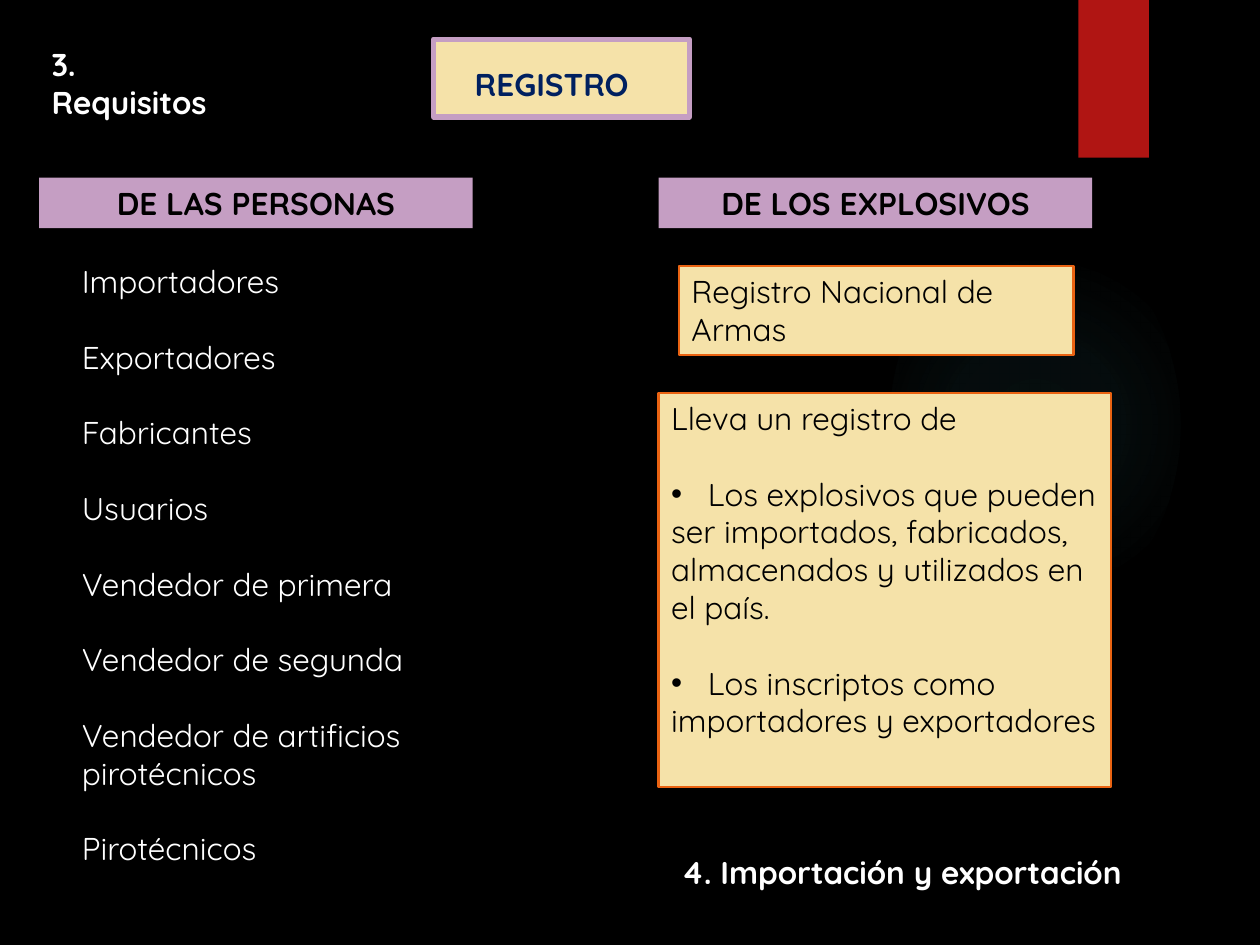
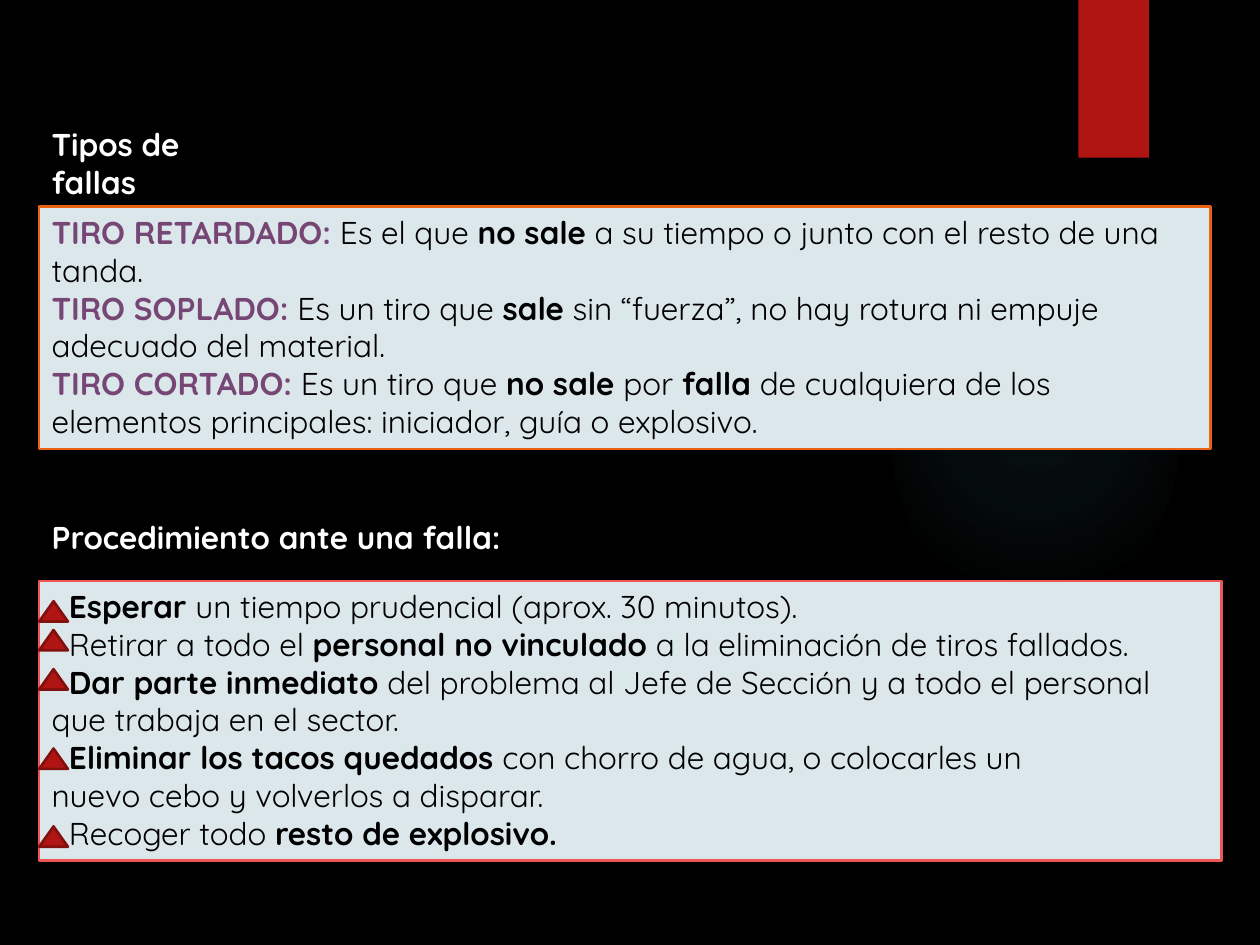
from dataclasses import dataclass

from lxml import etree
from pptx import Presentation
from pptx.dml.color import RGBColor
from pptx.enum.shapes import MSO_SHAPE as Shape
from pptx.enum.text import MSO_ANCHOR as Anchor, PP_ALIGN as Align
from pptx.oxml import parse_xml
from pptx.oxml.ns import nsdecls, qn
from pptx.util import Cm, Pt


@dataclass(frozen=True)
class Theme:
    font: str = "Quicksand"
    size: int = 18
    line_gap: float = 21.6
    outline: float = 1.5
    frame: float = 3
    black: str = "000000"
    white: str = "FFFFFF"
    navy: str = "002060"
    plum: str = "764674"
    lilac: str = "C59EC3"
    cream: str = "F5E2A9"
    ice: str = "DCE7EC"
    orange: str = "EA6312"
    coral: str = "ED5654"
    red: str = "B01513"
    dark_red: str = "82100E"
    glow: str = "50B9C1"


T = Theme()
LEFT = 0.79
RIGHT = 13.28
BULLET_TAB = 0.74
MARKER_INDENT = 0.35


@dataclass
class Para:
    runs: list
    before: float = 0
    align: Align = Align.LEFT
    bullet: bool = False
    indent: float = 0


def run(text, color=T.black, bold=False):
    return text, color, bold


def strong(text, color=T.black):
    return run(text, color, True)


def write(sp, paras):
    tf = sp.text_frame
    tf.word_wrap = True
    tf.vertical_anchor = Anchor.TOP
    for i, para in enumerate(paras):
        p = tf.paragraphs[0] if i == 0 else tf.add_paragraph()
        p.alignment = para.align
        p.space_before = Pt(para.before)
        pPr = p._p.get_or_add_pPr()
        pPr.set("marL", "0")
        pPr.set("indent", str(Cm(para.indent)))
        if para.bullet:
            etree.SubElement(pPr, qn("a:buFont"), typeface="Arial")
            etree.SubElement(pPr, qn("a:buChar"), char="•")
            tabs = etree.SubElement(pPr, qn("a:tabLst"))
            etree.SubElement(tabs, qn("a:tab"), pos=str(Cm(BULLET_TAB)), algn="l")
        for text, color, bold in para.runs:
            r = p.add_run()
            r.text = text
            r.font.name = T.font
            r.font.size = Pt(T.size)
            r.font.bold = bold
            r.font.color.rgb = RGBColor.from_string(color)


def add_shape(s, box, fill, line=None, width=T.outline, kind=Shape.RECTANGLE, paras=()):
    sp = s.shapes.add_shape(kind, *map(Cm, box))
    sp.shadow.inherit = False
    sp.fill.solid()
    sp.fill.fore_color.rgb = RGBColor.from_string(fill)
    if line:
        sp.line.color.rgb = RGBColor.from_string(line)
        sp.line.width = Pt(width)
    else:
        sp.line.fill.background()
    write(sp, paras)
    return sp


def add_text(s, box, paras):
    write(s.shapes.add_textbox(*map(Cm, box)), paras)


def add_heading(s, left, top, width, text, color=T.white):
    add_text(s, (left, top, width, 1.02), [Para([strong(text, color)])])


def add_column_band(s, left, text):
    add_shape(s, (left, 3.58, 8.74, 1.02), T.lilac,
              paras=[Para([strong(text)], align=Align.CENTER)])


def add_glow(s):
    sp = add_shape(s, (17.93, 4.65, 5.87, 7.82), T.glow, kind=Shape.OVAL)
    stops = "".join(
        f'<a:gs pos="{pos}000"><a:srgbClr val="{T.glow}">'
        f'<a:alpha val="{alpha}000"/></a:srgbClr></a:gs>'
        for pos, alpha in ((0, 7), (36, 6), (69, 0)))
    grad = parse_xml(
        f'<a:gradFill {nsdecls("a")}><a:gsLst>{stops}</a:gsLst><a:path path="circle">'
        '<a:fillToRect l="50000" t="50000" r="50000" b="50000"/></a:path></a:gradFill>')
    spPr = sp._element.spPr
    spPr.replace(spPr.find(qn("a:solidFill")), grad)


def add_base_slide(prs):
    s = prs.slides.add_slide(prs.slide_layouts[6])
    s.background.fill.solid()
    s.background.fill.fore_color.rgb = RGBColor.from_string(T.black)
    add_glow(s)
    add_shape(s, (21.74, 0, 1.42, 3.18), T.red)
    return s


def build_registry(prs):
    s = add_base_slide(prs)
    add_column_band(s, LEFT, "DE LAS PERSONAS")
    add_column_band(s, RIGHT, "DE LOS EXPLOSIVOS")
    add_shape(s, (8.74, 0.79, 5.16, 1.57), T.cream, T.lilac, T.frame)
    add_heading(s, 9.32, 1.19, 5.16, "REGISTRO", T.navy)

    people = ["Importadores", "Exportadores", "Fabricantes", "Usuarios",
              "Vendedor de primera", "Vendedor de segunda",
              "Vendedor de artificios pirotécnicos", "Pirotécnicos"]
    add_text(s, (1.4, 5.16, 7.95, 12.57),
             [Para([run(name, T.white)], before=T.line_gap if i else 0)
              for i, name in enumerate(people)])

    add_heading(s, LEFT, 0.79, 4.06, "3. Requisitos")
    add_heading(s, 13.49, 17.07, 10.31, "4. Importación y exportación")
    add_shape(s, (13.69, 5.36, 7.95, 1.8), T.cream, T.orange,
              paras=[Para([run("Registro Nacional de Armas")])])

    records = ["Los explosivos que pueden ser importados, fabricados, "
               "almacenados y utilizados en el país.",
               "Los inscriptos como importadores y exportadores"]
    add_shape(s, (RIGHT, 7.92, 9.12, 7.95), T.cream, T.orange,
              paras=[Para([run("Lleva un registro de")])]
              + [Para([run("\t" + text)], before=T.line_gap, bullet=True)
                 for text in records])


def build_failures(prs):
    s = add_base_slide(prs)
    add_heading(s, LEFT, 2.39, 4.85, "Tipos de fallas")
    failures = [
        ("TIRO RETARDADO: ", run("Es el que "), strong("no sale"),
         run(" a su tiempo o junto con el resto de una tanda.")),
        ("TIRO SOPLADO: ", run("Es un tiro que "), strong("sale"),
         run(" sin “fuerza”, no hay rotura ni empuje adecuado del material.")),
        ("TIRO CORTADO: ", run("Es un tiro que "), strong("no sale "), run("por "),
         strong("falla"), run(" de cualquiera de los elementos principales: "
                              "iniciador, guía o explosivo.")),
    ]
    add_shape(s, (LEFT, 4.17, 23.62, 4.88), T.ice, T.orange,
              paras=[Para([strong(term, T.plum), *rest]) for term, *rest in failures])

    add_heading(s, LEFT, 10.31, 9.78, "Procedimiento ante una falla:")
    steps = [
        [strong("Esperar "), run("un tiempo prudencial (aprox. 30 minutos).")],
        [run("Retirar a todo el "), strong("personal no vinculado "),
         run("a la eliminación de tiros fallados.")],
        [strong("Dar parte inmediato "),
         run("del problema al Jefe de Sección y a todo el personal "
             "que trabaja en el sector.")],
        [strong("Eliminar los tacos quedados "),
         run("con chorro de agua, o colocarles un")],
        [run("Recoger todo "), strong("resto de explosivo.")],
    ]
    paras = [Para(runs, indent=MARKER_INDENT) for runs in steps]
    paras.insert(4, Para([run("nuevo cebo y volverlos a disparar.")]))
    add_shape(s, (LEFT, 11.71, 23.83, 5.64), T.ice, T.coral, paras=paras)
    for top in (12.12, 12.7, 13.49, 15.09, 16.66):
        add_shape(s, (LEFT, top, 0.58, 0.41), T.red, T.dark_red,
                  kind=Shape.ISOSCELES_TRIANGLE)


def main():
    prs = Presentation()
    prs.slide_width, prs.slide_height = Cm(25.4), Cm(19.05)
    build_registry(prs)
    build_failures(prs)
    prs.save("out.pptx")


if __name__ == "__main__":
    main()
